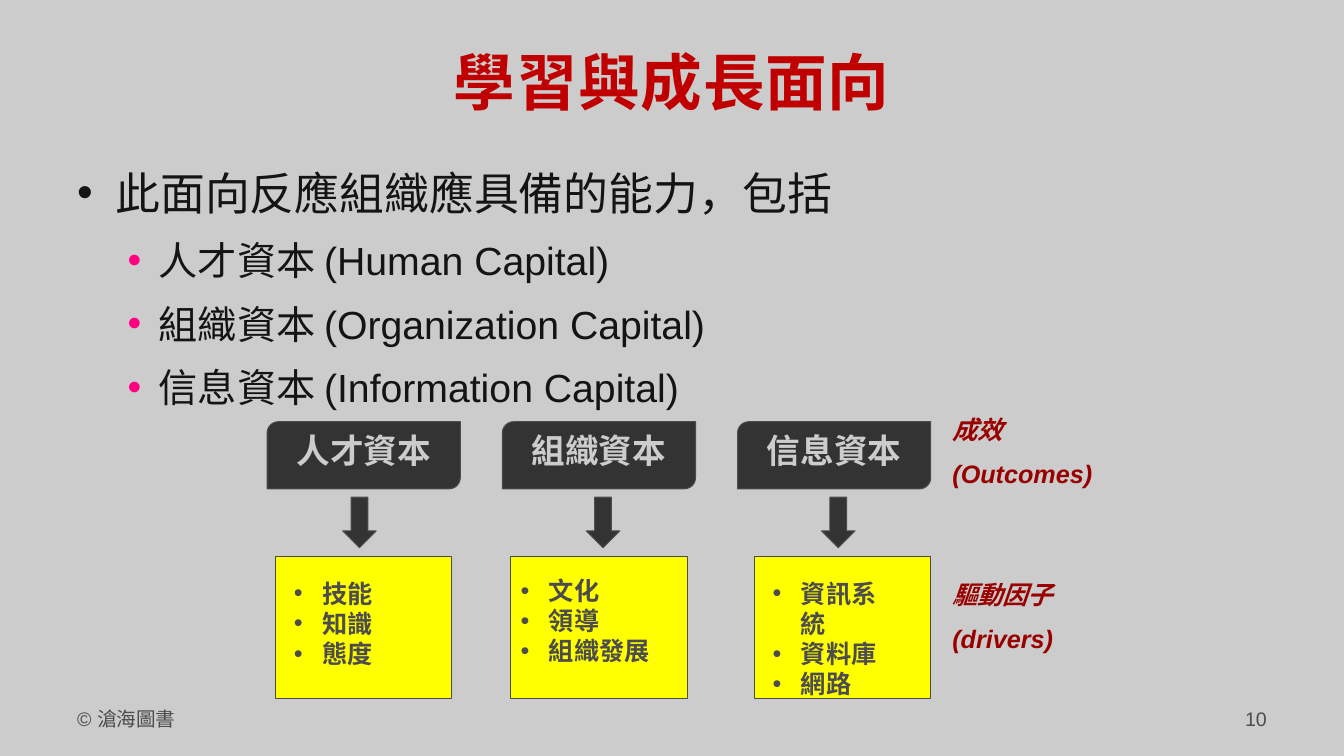
from lxml.etree import SubElement
from pptx import Presentation
from pptx.dml.color import RGBColor
from pptx.enum.shapes import MSO_SHAPE as Shape
from pptx.enum.text import MSO_ANCHOR as Anchor, PP_ALIGN as Align
from pptx.oxml.ns import qn
from pptx.util import Inches, Pt

GRAY = RGBColor(0xCC, 0xCC, 0xCC)
INK = RGBColor(0x14, 0x14, 0x14)
DARK = RGBColor(0x33, 0x33, 0x33)
MIDDLE = RGBColor(0x4C, 0x4C, 0x4C)
YELLOW = RGBColor(0xFF, 0xFF, 0x00)
RED = RGBColor(0xC0, 0x00, 0x00)
MAROON = RGBColor(0x99, 0x00, 0x00)
PINK = RGBColor(0xFF, 0x00, 0x80)

COLUMNS, ROWS = 160, 90
MARGIN, CONTENT_WIDTH = 8, 144
CHART_LEFT, CHART_TOP = 31.8, 50.2

# Heading, drivers, then columns of heading, arrow, box and list, and the list's row
CAPITALS = [
    ("人才資本", ["技能", "知識", "態度"], (0, 9, 1, 2), 18, 20),
    ("組織資本", ["文化", "領導", "組織發展"], (28, 38, 29, 29), 17.7, 22),
    ("信息資本", ["資訊系統", "資料庫", "網路"], (56, 66, 58, 59), 18, 17),
]
ENGLISH = ["Human", "Organization", "Information"]


class SlideBuilder:
    """Places elements on a grid of COLUMNS by ROWS cells."""

    font_name = "Arial"

    def __init__(self, presentation):
        self.cell_width = presentation.slide_width / COLUMNS
        self.cell_height = presentation.slide_height / ROWS
        self.slide = presentation.slides.add_slide(presentation.slide_layouts[5])
        self.slide.background.fill.solid()
        self.slide.background.fill.fore_color.rgb = GRAY

    def area(self, column, row, width, height):
        return (round(column * self.cell_width), round(row * self.cell_height),
                round(width * self.cell_width), round(height * self.cell_height))

    def format_font(self, font, size, color, **style):
        font.color.rgb = color
        for name, value in dict(style, name=self.font_name, size=Pt(size)).items():
            setattr(font, name, value)

    def bullet(self, paragraph, indent, hanging, color=None):
        properties = paragraph._p.get_or_add_pPr()
        properties.set("marL", str(Inches(indent)))
        properties.set("indent", str(-Inches(hanging)))
        if color is not None:
            SubElement(SubElement(properties, qn("a:buClr")), qn("a:srgbClr"), val=str(color))
        SubElement(properties, qn("a:buFont"), typeface=self.font_name)
        SubElement(properties, qn("a:buChar"), char="•")

    def title(self, place, text, size, color):
        title = self.slide.shapes.title
        title.left, title.top, title.width, title.height = self.area(*place)
        title.text_frame.text = text
        title.text_frame.vertical_anchor = Anchor.MIDDLE
        paragraph = title.text_frame.paragraphs[0]
        paragraph.alignment = Align.CENTER
        run = paragraph.runs[0]
        self.format_font(run.font, size, color, bold=True)
        run._r.get_or_add_rPr().set("spc", "50")

    def text(self, place, lines, size, color, align=Align.LEFT, gap=0, indent=0, **style):
        frame = self.slide.shapes.add_textbox(*self.area(*place)).text_frame
        frame.word_wrap = True
        frame.text = "\n".join(lines)
        for index, paragraph in enumerate(frame.paragraphs):
            paragraph.alignment = align
            if index:
                paragraph.space_before = Pt(gap)
            if indent:
                self.bullet(paragraph, indent, indent)
            self.format_font(paragraph.runs[0].font, size, color, **style)

    def outline(self, place, heading, items):
        """Writes a bulleted heading with second-level items."""
        frame = self.slide.shapes.add_textbox(*self.area(*place)).text_frame
        frame.word_wrap = True
        frame.text = "\n".join([heading, *items])
        for index, paragraph in enumerate(frame.paragraphs):
            paragraph.space_after = Pt(6)
            if index:
                paragraph.level = 1
                paragraph.space_before = Pt(6)
                self.bullet(paragraph, 0.81, 0.31, PINK)
            else:
                self.bullet(paragraph, 0.38, 0.38)
            self.format_font(paragraph.runs[0].font, 28 if index else 32, INK)

    def shape(self, kind, place, fill, text=""):
        shape = self.slide.shapes.add_shape(kind, *self.area(*place))
        shape.shadow.inherit = False
        shape.fill.solid()
        shape.fill.fore_color.rgb = fill
        shape.line.color.rgb = MIDDLE
        shape.line.width = Pt(0.75)
        if text:
            shape.text_frame.text = text
            shape.text_frame.vertical_anchor = Anchor.TOP
            paragraph = shape.text_frame.paragraphs[0]
            paragraph.alignment = Align.CENTER
            self.format_font(paragraph.runs[0].font, 24, GRAY, bold=True)


def main():
    presentation = Presentation()
    presentation.slide_width, presentation.slide_height = Inches(13.33), Inches(7.5)
    builder = SlideBuilder(presentation)

    builder.title((MARGIN, 3, CONTENT_WIDTH, 13.2), "學習與成長面向", 44, RED)
    builder.outline((MARGIN, 19.1, CONTENT_WIDTH, 62.9), "此面向反應組織應具備的能力，包括",
                    [f"{capital[0]} ({english} Capital)"
                     for capital, english in zip(CAPITALS, ENGLISH)])

    footer_width = 37.3
    builder.text((MARGIN, 83.6, footer_width, 6.2), ["© 滄海圖書"], 14, MIDDLE)
    builder.text((COLUMNS - MARGIN - footer_width, 83.6, footer_width, 6.2), ["10"],
                 14, MIDDLE, Align.RIGHT)

    for heading, drivers, columns, list_row, list_width in CAPITALS:
        heading_left, arrow_left, box_left, list_left = [CHART_LEFT + c for c in columns]
        builder.shape(Shape.ROUND_2_DIAG_RECTANGLE, (heading_left, CHART_TOP, 23, 8),
                      DARK, heading)
        builder.shape(Shape.DOWN_ARROW, (arrow_left, CHART_TOP + 9, 4, 6), DARK)
        builder.shape(Shape.RECTANGLE, (box_left, CHART_TOP + 16, 21, 17), YELLOW)
        builder.text((list_left, CHART_TOP + list_row, list_width, 12.5), drivers,
                     18, MIDDLE, indent=0.28, bold=True)

    for row, width, height, lines in [(48.7, 20.6, 13.9, ["成效", "(Outcomes)"]),
                                      (68.4, 16.9, 10.3, ["驅動因子", "(drivers)"])]:
        builder.text((112.2, row, width, height), lines, 18, MAROON,
                     gap=10, bold=True, italic=True)

    presentation.save("out.pptx")


if __name__ == "__main__":
    main()
